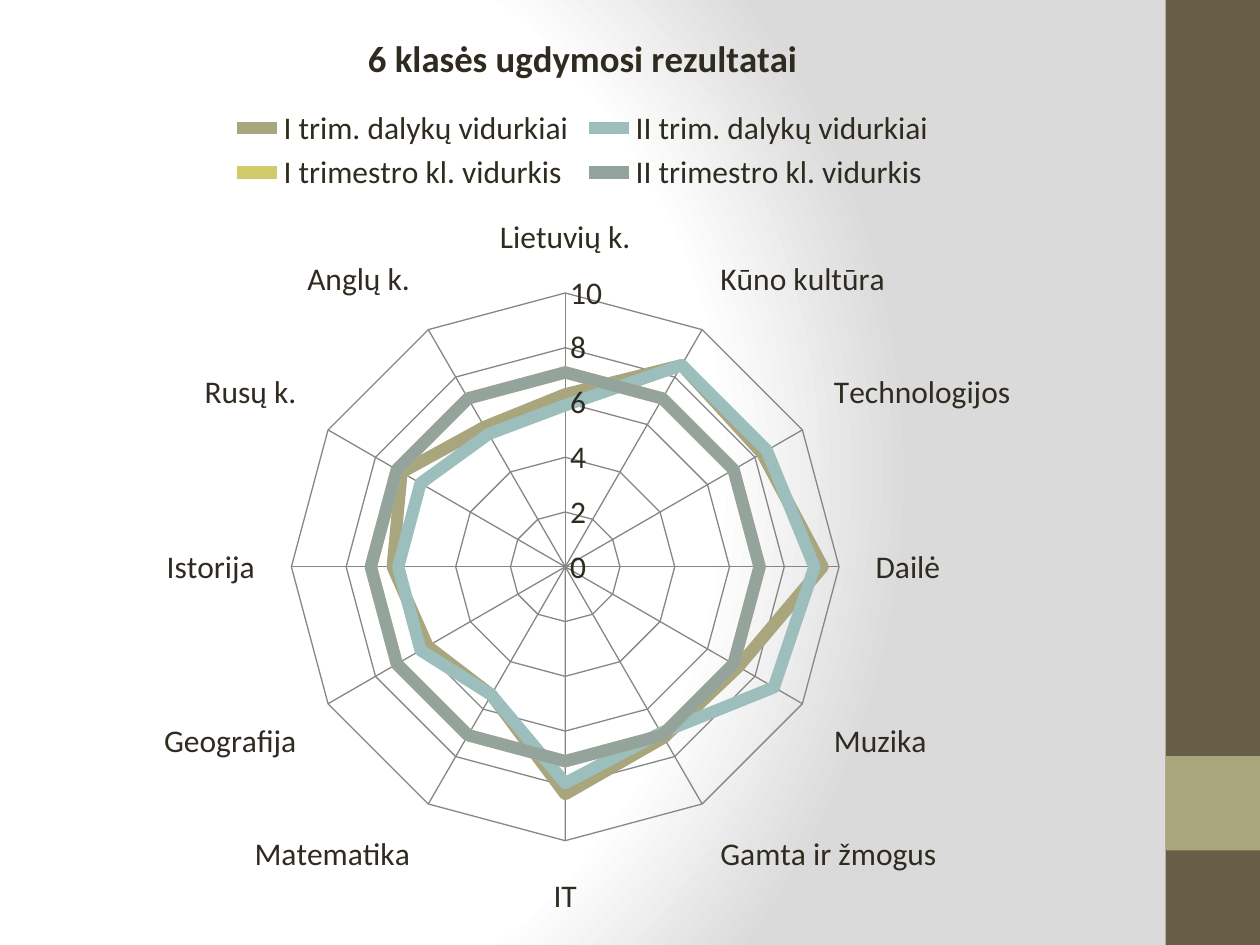
from lxml.etree import SubElement
from pptx import Presentation
from pptx.chart.data import CategoryChartData
from pptx.dml.color import RGBColor
from pptx.enum.chart import XL_CHART_TYPE, XL_LEGEND_POSITION, XL_TICK_MARK
from pptx.enum.shapes import MSO_SHAPE
from pptx.oxml import parse_xml
from pptx.oxml.ns import nsdecls, qn
from pptx.util import Inches, Pt

COLORS = {"text": "2F2B20", "band": "675E47", "accent": "A9A57C",
          "grid": "868686", "light": "FFFFFF", "shade": "DADADA"}
FONT = "Calibri"
WIDTH, HEIGHT = Inches(10), Inches(7.5)
BAND = Inches(0.75)

TITLE = "6 klasės ugdymosi rezultatai"
SUBJECTS = ["Lietuvių k.", "Anglų k.", "Rusų k.", "Istorija", "Geografija",
            "Matematika", "IT", "Gamta ir žmogus", "Muzika", "Dailė",
            "Technologijos", "Kūno kultūra"]
CLASS_MEAN = [7.1] * len(SUBJECTS)
SERIES = [
    ("I trim. dalykų vidurkiai", "A9A57C",
     [6.3, 5.9, 6.9, 6.3, 5.8, 5.4, 8.3, 7.2, 7.3, 9.4, 8.3, 8.5]),
    ("II trim. dalykų vidurkiai", "9CBEBD",
     [5.9, 5.6, 6.1, 6.1, 6.1, 5.4, 7.9, 7, 8.8, 9.1, 8.5, 8.5]),
    ("I trimestro kl. vidurkis", "D2CB6C", CLASS_MEAN),
    ("II trimestro kl. vidurkis", "95A39D", CLASS_MEAN),
]


def rgb(value):
    return RGBColor.from_string(value)


def style_font(font, size, bold=False):
    font.name, font.size, font.bold = FONT, Pt(size), bold
    font.color.rgb = rgb(COLORS["text"])


def style_line(line, color, width):
    line.color.rgb = rgb(color)
    line.width = Pt(width)


def paint_background(s):
    """Light circular gradient that darkens towards the right."""
    fill = s.background.fill
    fill.gradient()
    stops = "".join(
        f'<a:gs pos="{pos * 1000}"><a:srgbClr val="{COLORS[name]}"/></a:gs>'
        for pos, name in ((0, "light"), (75, "light"), (100, "shade")))
    grad = parse_xml(
        f'<a:gradFill {nsdecls("a")} rotWithShape="1"><a:gsLst>{stops}</a:gsLst>'
        '<a:path path="circle"><a:fillToRect l="20000" t="50000" r="100000" '
        'b="50000"/></a:path></a:gradFill>')
    old = s.element.find(".//" + qn("a:gradFill"))
    old.getparent().replace(old, grad)


def add_side_band(s, x, y, w, h):
    """Full-height band with a square accent one band width above its foot."""
    for top, height, color in ((y, h, "band"), (y + h - 2 * w, w, "accent")):
        sp = s.shapes.add_shape(MSO_SHAPE.RECTANGLE, x, top, w, height)
        sp.shadow.inherit = False
        sp.fill.solid()
        sp.fill.fore_color.rgb = rgb(COLORS[color])
        sp.line.fill.background()


def place_plot(chart, x, y, w, h):
    """Fix the inner plot area, in shares of the chart."""
    area = chart.element.find(".//" + qn("c:plotArea"))
    layout = area.find(qn("c:layout"))
    if layout is None:
        layout = area.makeelement(qn("c:layout"))
        area.insert(0, layout)
    manual = SubElement(layout, qn("c:manualLayout"))
    for tag, val in (("layoutTarget", "inner"), ("xMode", "edge"),
                     ("yMode", "edge"), ("x", x), ("y", y), ("w", w), ("h", h)):
        SubElement(manual, qn("c:" + tag)).set("val", str(val))


def add_results_chart(s, x, y, w, h):
    data = CategoryChartData()
    data.categories = SUBJECTS
    for name, _, values in SERIES:
        data.add_series(name, values)
    chart = s.shapes.add_chart(XL_CHART_TYPE.RADAR, x, y, w, h, data).chart
    style_font(chart.font, 18)

    # Title and legend
    chart.has_title = True
    tf = chart.chart_title.text_frame
    tf.text = TITLE
    style_font(tf.paragraphs[0].runs[0].font, 21, bold=True)
    chart.has_legend = True
    chart.legend.position = XL_LEGEND_POSITION.TOP
    chart.legend.include_in_layout = False
    style_font(chart.legend.font, 18)

    # Axes
    for axis in (chart.category_axis, chart.value_axis):
        axis.has_major_gridlines = True
        axis.major_tick_mark = axis.minor_tick_mark = XL_TICK_MARK.NONE
        style_line(axis.major_gridlines.format.line, COLORS["grid"], 0.75)
        style_line(axis.format.line, COLORS["grid"], 0.75)
        style_font(axis.tick_labels.font, 18)
    chart.category_axis.reverse_order = True
    values = chart.value_axis
    values.minimum_scale, values.maximum_scale, values.major_unit = 0, 10, 2
    values.tick_labels.number_format = "General"
    values.tick_labels.number_format_is_linked = False

    # Series
    plot = chart.plots[0]
    plot.vary_by_categories = False
    for series, (_, color, _) in zip(plot.series, SERIES):
        style_line(series.format.line, color, 7)
    place_plot(chart, 0.25, 0.31, 0.47, 0.58)


def main():
    prs = Presentation()
    prs.slide_width, prs.slide_height = WIDTH, HEIGHT
    s = prs.slides.add_slide(prs.slide_layouts[6])
    paint_background(s)
    add_side_band(s, WIDTH - BAND, 0, BAND, HEIGHT)
    add_results_chart(s, 0, 0, WIDTH - BAND, HEIGHT)
    prs.save("out.pptx")


if __name__ == "__main__":
    main()
